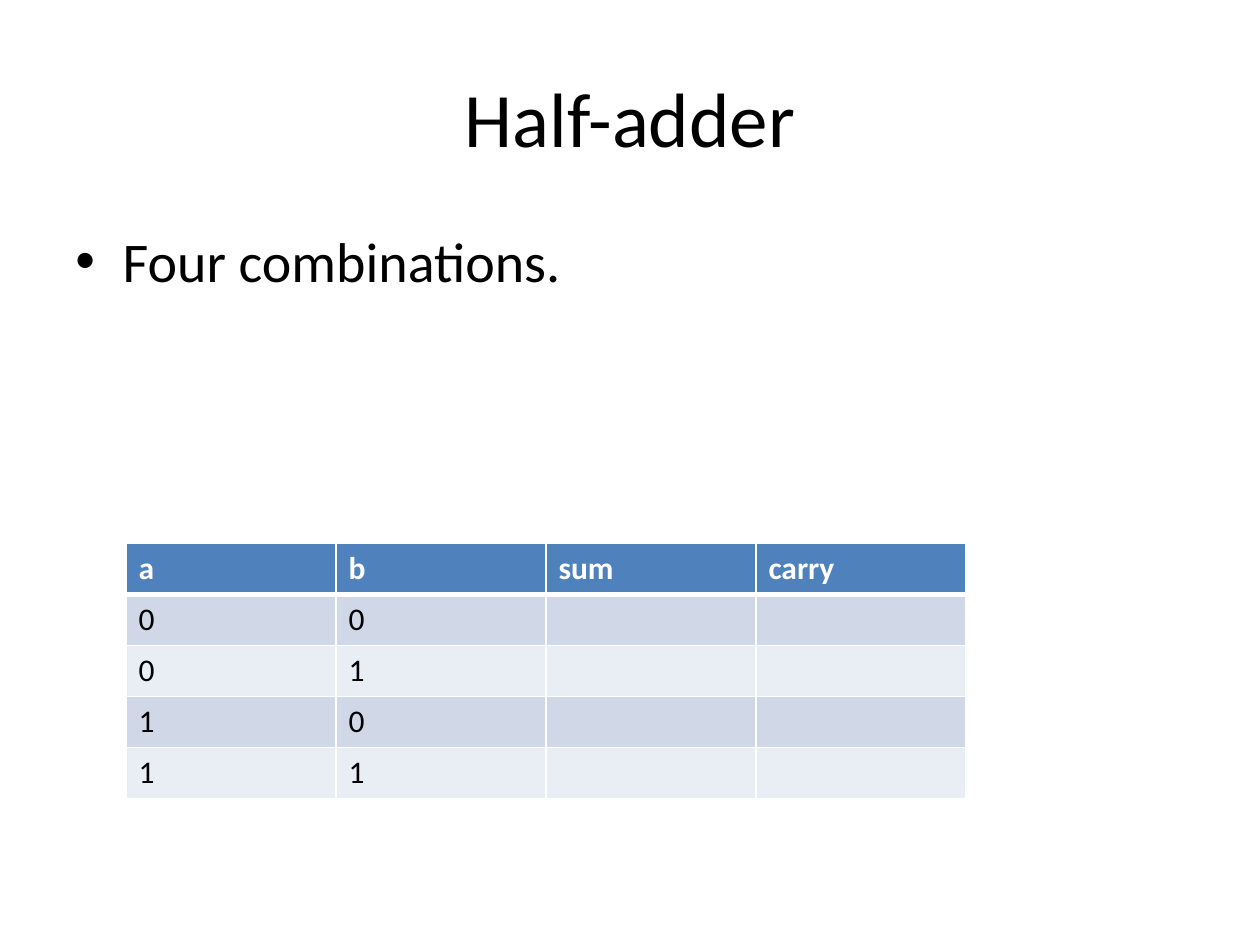
from lxml.etree import SubElement
from pptx import Presentation
from pptx.dml.color import RGBColor
from pptx.enum.text import MSO_ANCHOR, PP_ALIGN
from pptx.oxml.ns import qn
from pptx.util import Pt

FONT = "Calibri"
BLACK = RGBColor(0x00, 0x00, 0x00)
WHITE = RGBColor(0xFF, 0xFF, 0xFF)
HEADER_BLUE = RGBColor(0x4F, 0x81, 0xBD)
BAND_DARK = RGBColor(0xD0, 0xD8, 0xE8)
BAND_LIGHT = RGBColor(0xE9, 0xED, 0xF4)

TRUTH_TABLE = [
    ("a", "b", "sum", "carry"),
    ("0", "0", "", ""),
    ("0", "1", "", ""),
    ("1", "0", "", ""),
    ("1", "1", "", ""),
]


def style_font(paragraph, size, color=BLACK, bold=False):
    font = paragraph.font
    font.name = FONT
    font.size = Pt(size)
    font.bold = bold
    font.color.rgb = color


def add_text(slide, text, left, top, width, height, size, anchor):
    box = slide.shapes.add_textbox(Pt(left), Pt(top), Pt(width), Pt(height))
    frame = box.text_frame
    frame.word_wrap = True
    frame.vertical_anchor = anchor
    paragraph = frame.paragraphs[0]
    paragraph.text = text
    style_font(paragraph, size)
    return paragraph


def add_bullet(paragraph, indent):
    properties = paragraph._p.get_or_add_pPr()
    properties.set("marL", str(Pt(indent)))
    properties.set("indent", str(-Pt(indent)))
    SubElement(properties, qn("a:buFont"), typeface="Arial")
    SubElement(properties, qn("a:buChar"), char="•")


def set_borders(cell, top, bottom):
    properties = cell._tc.get_or_add_tcPr()
    widths = {"lnL": 1, "lnR": 1, "lnT": top, "lnB": bottom}
    for side, width in widths.items():
        line = SubElement(properties, qn(f"a:{side}"), w=str(Pt(width)))
        fill = SubElement(line, qn("a:solidFill"))
        SubElement(fill, qn("a:srgbClr"), val=str(WHITE))


def add_truth_table(slide, rows, left, top, column_width, row_height):
    column_count = len(rows[0])
    table = slide.shapes.add_table(
        len(rows), column_count, Pt(left), Pt(top),
        Pt(column_width * column_count), Pt(row_height * len(rows)),
    ).table
    for row_index, values in enumerate(rows):
        is_header = row_index == 0
        band = BAND_DARK if row_index % 2 else BAND_LIGHT
        for column_index, value in enumerate(values):
            cell = table.cell(row_index, column_index)
            # A thick rule separates the header from the body
            set_borders(cell, top=3 if row_index == 1 else 1,
                        bottom=3 if is_header else 1)
            cell.fill.solid()
            cell.fill.fore_color.rgb = HEADER_BLUE if is_header else band
            cell.text = value
            style_font(cell.text_frame.paragraphs[0], 18,
                       WHITE if is_header else BLACK, is_header)


def main():
    presentation = Presentation()
    presentation.slide_width = Pt(720)
    presentation.slide_height = Pt(540)
    slide = presentation.slides.add_slide(presentation.slide_layouts[6])

    # Title
    title = add_text(slide, "Half-adder", 36, 21.6, 648, 90, 44, MSO_ANCHOR.MIDDLE)
    title.alignment = PP_ALIGN.CENTER

    # Bullet
    bullet = add_text(slide, "Four combinations.", 36, 126, 648, 356.4, 32, MSO_ANCHOR.TOP)
    bullet.space_before = Pt(6.4)
    add_bullet(bullet, 27)

    # Inputs, with the outputs left open
    add_truth_table(slide, TRUTH_TABLE, 72, 310.4, 120, 29.2)

    presentation.save("out.pptx")


if __name__ == "__main__":
    main()
